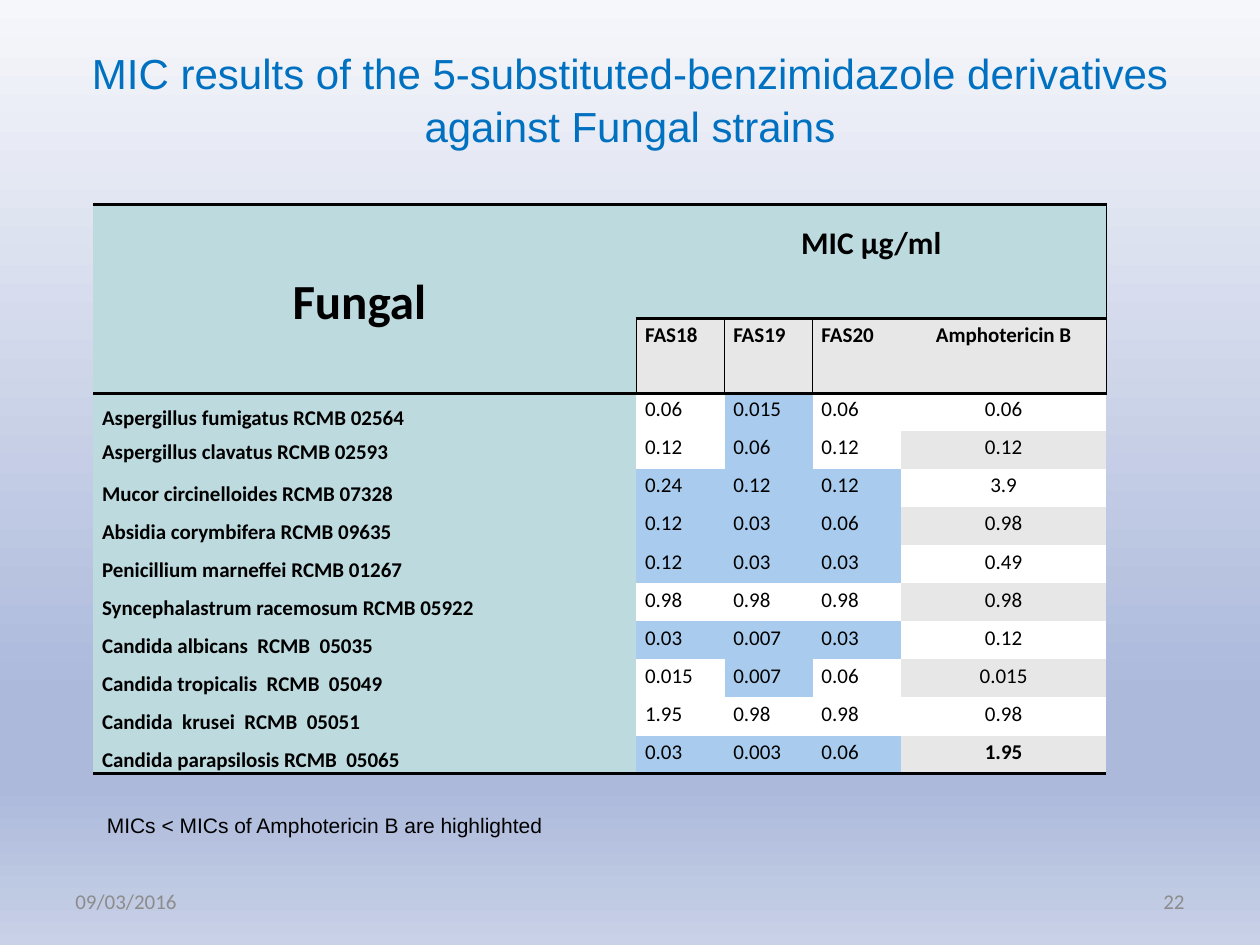
from dataclasses import dataclass

from lxml import etree
from pptx import Presentation
from pptx.dml.color import RGBColor
from pptx.enum.text import MSO_ANCHOR, PP_ALIGN
from pptx.oxml import parse_xml
from pptx.oxml.ns import qn
from pptx.util import Inches, Pt

LEFT, CENTER, RIGHT = PP_ALIGN.LEFT, PP_ALIGN.CENTER, PP_ALIGN.RIGHT
TOP, MIDDLE, BOTTOM = MSO_ANCHOR.TOP, MSO_ANCHOR.MIDDLE, MSO_ANCHOR.BOTTOM
NO_GRID_STYLE = "{2D5ABB26-0587-4C30-8999-92F81FD0307C}"
DRAWING_NAMESPACE = "http://schemas.openxmlformats.org/drawingml/2006/main"


@dataclass(frozen=True)
class Theme:
    """Colours, fonts and type sizes of the slide."""

    title: str = "0070C0"
    ink: str = "000000"
    muted: str = "8C8C8C"
    label_fill: str = "BDDADF"
    band_fill: str = "E7E7E7"
    plain_fill: str = "FFFFFF"
    highlight: str = "A9CCEE"
    background: tuple = ((0, "F6F7FB"), (74, "ACB9DB"), (83, "ACB9DB"), (100, "C8D1E7"))
    heading_font: str = "Arial"
    table_font: str = "Calibri"
    title_size: int = 24
    group_size: int = 28
    unit_size: int = 18
    body_size: int = 12


THEME = Theme()
COLUMN_WIDTHS = (4.31, 0.7, 0.7, 0.7, 1.63)
HEADER_HEIGHTS = (0.91, 0.59)
BODY_HEIGHT = 3.02
COMPOUNDS = ("FAS18", "FAS19", "FAS20", "Amphotericin B")
RESULTS = (
    ("Aspergillus fumigatus RCMB 02564", "0.06", "0.015", "0.06", "0.06"),
    ("Aspergillus clavatus RCMB 02593", "0.12", "0.06", "0.12", "0.12"),
    ("Mucor circinelloides RCMB 07328", "0.24", "0.12", "0.12", "3.9"),
    ("Absidia corymbifera RCMB 09635", "0.12", "0.03", "0.06", "0.98"),
    ("Penicillium marneffei RCMB 01267", "0.12", "0.03", "0.03", "0.49"),
    ("Syncephalastrum racemosum RCMB 05922", "0.98", "0.98", "0.98", "0.98"),
    ("Candida albicans  RCMB  05035", "0.03", "0.007", "0.03", "0.12"),
    ("Candida tropicalis  RCMB  05049", "0.015", "0.007", "0.06", "0.015"),
    ("Candida  krusei  RCMB  05051", "1.95", "0.98", "0.98", "0.98"),
    ("Candida parapsilosis RCMB  05065", "0.03", "0.003", "0.06", "1.95"),
)


def write_text(frame, text, *, size=THEME.body_size, font=THEME.table_font,
               color=THEME.ink, bold=False, align=LEFT, spacing=1.0):
    """Write one formatted paragraph into a text frame."""
    frame.word_wrap = True
    paragraph = frame.paragraphs[0]
    paragraph.text = text
    paragraph.alignment = align
    paragraph.line_spacing = spacing
    for run in paragraph.runs:
        run.font.size = Pt(size)
        run.font.name = font
        run.font.bold = bold
        run.font.color.rgb = RGBColor.from_string(color)


def add_text(slide, text, left, top, width, height, anchor=MIDDLE, **text_format):
    """Add a text box with formatted text."""
    box = slide.shapes.add_textbox(Inches(left), Inches(top), Inches(width), Inches(height))
    box.text_frame.vertical_anchor = anchor
    write_text(box.text_frame, text, **text_format)


def paint_background(slide):
    """Fill the slide background with a vertical gradient."""
    stops = "".join(
        f'<a:gs pos="{position * 1000}"><a:srgbClr val="{color}"/></a:gs>'
        for position, color in THEME.background
    )
    fill = slide.background.fill
    fill.gradient()
    fill.gradient_angle = 270
    stop_list = parse_xml(f'<a:gsLst xmlns:a="{DRAWING_NAMESPACE}">{stops}</a:gsLst>')
    current = next(slide.element.iter(qn("a:gsLst")))
    current.getparent().replace(current, stop_list)


def add_border(cell, side, points):
    """Add a solid line to one side (L, R, T or B) of a cell."""
    properties = cell._tc.get_or_add_tcPr()
    line = etree.SubElement(properties, qn(f"a:ln{side}"), w=str(Pt(points)))
    fill = etree.SubElement(line, qn("a:solidFill"))
    etree.SubElement(fill, qn("a:srgbClr"), val=THEME.ink)


def fill_cell(cell, text, fill, anchor=TOP, borders=None, bottom=0, **text_format):
    """Set the borders, fill, margins and text of a table cell."""
    for side, points in (borders or {}).items():
        add_border(cell, side, points)
    cell.fill.solid()
    cell.fill.fore_color.rgb = RGBColor.from_string(fill)
    cell.margin_left = cell.margin_right = Inches(0.07)
    cell.margin_top, cell.margin_bottom = 0, Inches(bottom)
    cell.vertical_anchor = anchor
    write_text(cell.text_frame, text, spacing=1.15, **text_format)


def fill_header(table):
    """Fill the two header rows and merge their group cells."""
    fill_cell(table.cell(0, 0), "Fungal ", THEME.label_fill, MIDDLE, {"T": 2, "B": 2},
              size=THEME.group_size, bold=True, align=CENTER)
    add_border(table.cell(1, 0), "B", 2)
    fill_cell(table.cell(0, 1), "MIC µg/ml", THEME.label_fill, MIDDLE,
              {"R": 1, "T": 2, "B": 2}, bottom=0.32,
              size=THEME.unit_size, bold=True, align=CENTER)
    for column in range(2, 5):
        for side in "RTB" if column == 4 else "TB":
            add_border(table.cell(0, column), side, 1 if side == "R" else 2)
    table.cell(0, 0).merge(table.cell(1, 0))
    table.cell(0, 1).merge(table.cell(0, 4))
    side_lines = ({"L": 1}, {"L": 1}, {}, {"R": 1})
    for column, (compound, lines) in enumerate(zip(COMPOUNDS, side_lines), start=1):
        fill_cell(table.cell(1, column), compound, THEME.band_fill, borders={**lines, "T": 2},
                  bold=True, align=CENTER if column == 4 else LEFT)


def fill_results(table):
    """Fill the body, highlighting each MIC below that of the reference drug."""
    for index, (strain, *values, reference) in enumerate(RESULTS):
        row = index + 2
        is_last = index == len(RESULTS) - 1
        borders = {"B": 2} if is_last else {}
        fill_cell(table.cell(row, 0), strain, THEME.label_fill,
                  MIDDLE if index == 1 else BOTTOM, borders, bold=True)
        for column, value in enumerate(values, start=1):
            is_lower = float(value) < float(reference)
            fill_cell(table.cell(row, column), value,
                      THEME.highlight if is_lower else THEME.plain_fill, borders=borders)
        fill_cell(table.cell(row, 4), reference,
                  THEME.band_fill if index % 2 else THEME.plain_fill,
                  borders=borders, bold=is_last, align=CENTER)


def add_mic_table(slide):
    """Add the table of MIC results."""
    row_height = BODY_HEIGHT / len(RESULTS)
    heights = (*HEADER_HEIGHTS, *[row_height] * len(RESULTS))
    table = slide.shapes.add_table(
        len(heights), len(COLUMN_WIDTHS), Inches(0.74), Inches(1.62),
        Inches(sum(COLUMN_WIDTHS)), Inches(sum(heights))).table
    table.first_row = table.horz_banding = False
    table._tbl.tblPr.find(qn("a:tableStyleId")).text = NO_GRID_STYLE
    for column, width in zip(table.columns, COLUMN_WIDTHS):
        column.width = Inches(width)
    for row, height in zip(table.rows, heights):
        row.height = Inches(height)
    fill_header(table)
    fill_results(table)


def main():
    """Build and save the slide."""
    presentation = Presentation()
    presentation.slide_width, presentation.slide_height = Inches(10), Inches(7.5)
    slide = presentation.slides.add_slide(presentation.slide_layouts[6])
    paint_background(slide)
    add_text(slide,
             "MIC results of the 5-substituted-benzimidazole derivatives against Fungal strains\v",
             0.5, 0.3, 9, 1.25, size=THEME.title_size, font=THEME.heading_font,
             color=THEME.title, align=CENTER, spacing=1.06)
    add_text(slide, "09/03/2016", 0.5, 6.95, 2.33, 0.4, color=THEME.muted)
    add_text(slide, "22", 7.17, 6.95, 2.33, 0.4, color=THEME.muted, align=RIGHT)
    add_mic_table(slide)
    add_text(slide, "MICs < MICs of Amphotericin B are highlighted",
             0.75, 6.4, 5, 0.3, TOP, font=THEME.heading_font)
    presentation.save("out.pptx")


if __name__ == "__main__":
    main()
